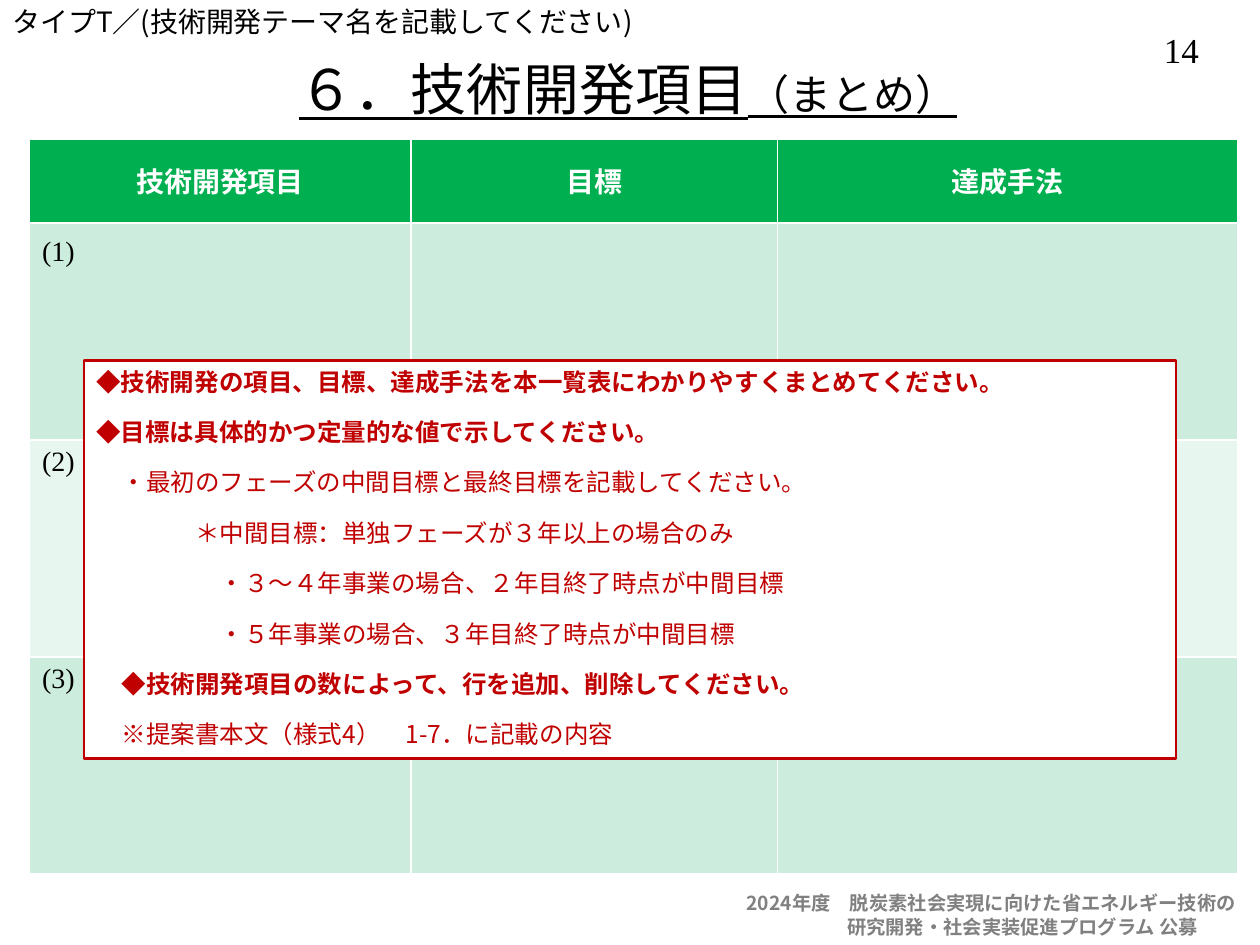
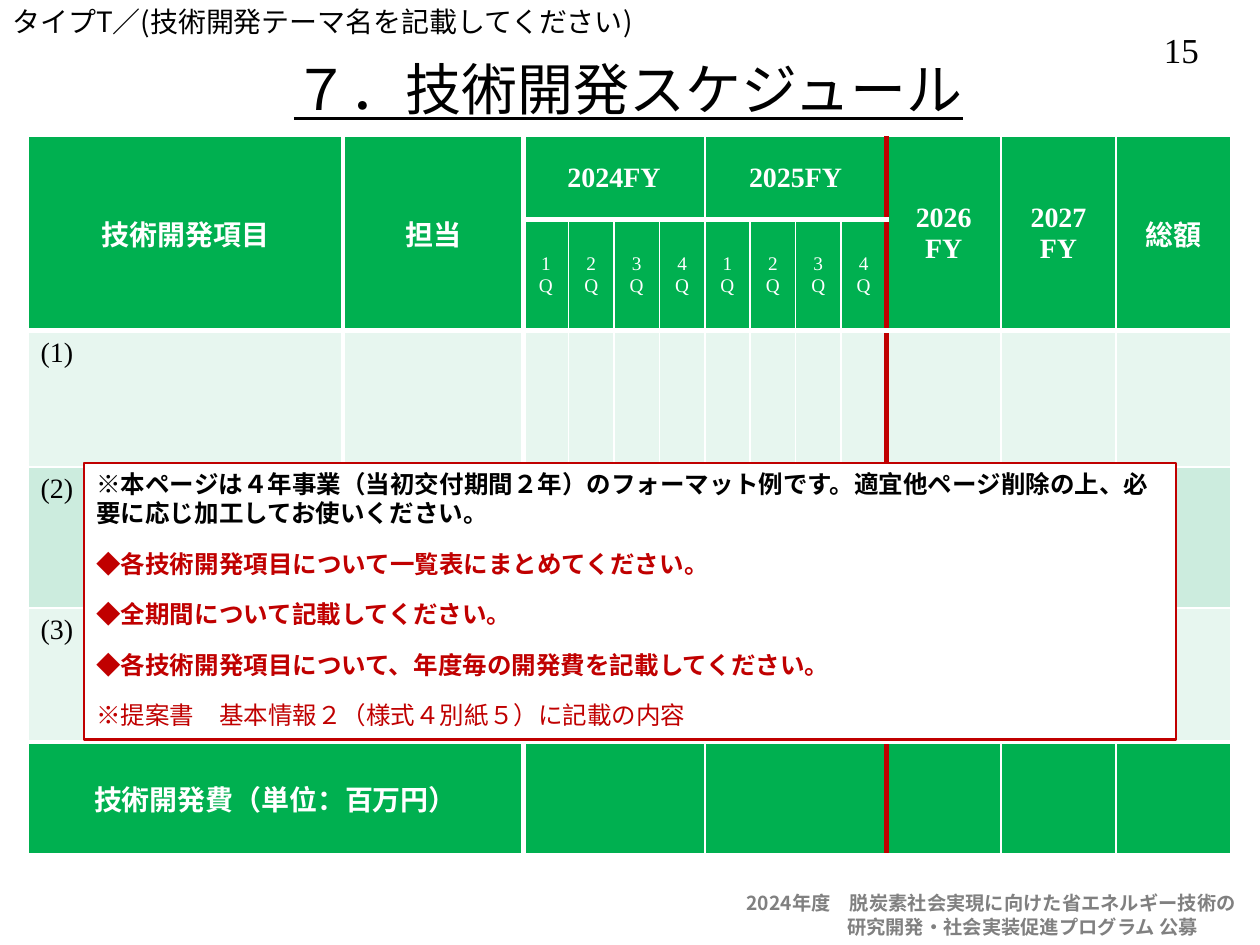
"""Build the development item summary and schedule slides."""
from lxml.etree import SubElement
from pptx import Presentation
from pptx.dml.color import RGBColor
from pptx.enum.shapes import MSO_SHAPE
from pptx.enum.text import MSO_ANCHOR, MSO_AUTO_SIZE, PP_ALIGN
from pptx.oxml.ns import qn
from pptx.util import Pt

HUES = {"ink": "000000", "paper": "FFFFFF", "red": "C00000", "gray": "808080",
        "green": "00B050", "mint": "CCECDE", "pale": "E7F6EF"}
SANS, SERIF = "Noto Sans CJK JP", "Times New Roman"
THEME = "タイプT／(技術開発テーマ名を記載してください)"
FOOT = [("2024年度　脱炭素社会実現に向けた省エネルギー技術の", 0),
        ("研究開発・社会実装促進プログラム 公募", 57.5)]
LABELS = ["(1)", "(2)", "(3)"]

GOALS = {
    "page": "14",
    "title": [("６．技術開発項目", 32), ("（まとめ）", 24)],
    "at": (16.8, 78.5), "cols": [218, 209.5, 263], "rows": [49] + [124] * 3,
    "merge": [],
    "cells": {(0, 0): "技術開発項目", (0, 1): "目標", (0, 2): "達成手法"},
    "first": 1, "last": 4, "tints": ["mint", "pale"], "labels": ["(1)　"] + LABELS[1:],
    "tall": {}, "flat": {0: 3, 1: 1.5}, "split": None,
    "box": (48, 206, 624, 227.5),
    "notes": [
        ("◆技術開発の項目、目標、達成手法を本一覧表にわかりやすくまとめてください。", 0, True, "red"),
        ("◆目標は具体的かつ定量的な値で示してください。", 0, True, "red"),
        ("・最初のフェーズの中間目標と最終目標を記載してください。", 14.4, False, "red"),
        ("＊中間目標：単独フェーズが３年以上の場合のみ", 56.4, False, "red"),
        ("・３～４年事業の場合、２年目終了時点が中間目標", 70.4, False, "red"),
        ("・５年事業の場合、３年目終了時点が中間目標", 70.4, False, "red"),
        ("◆技術開発項目の数によって、行を追加、削除してください。", 14.4, True, "red"),
        ("※提案書本文（様式4）　1-7．に記載の内容", 14.4, False, "red")],
}
PLAN = {
    "page": "15",
    "title": [("７．技術開発スケジュール", 32)],
    "at": (16, 78), "cols": [180, 103] + [25.95] * 8 + [65.6] * 3,
    "rows": [47.5, 63.5, 78, 80.5, 76.5, 64],
    "merge": [(0, c, 1, c) for c in (0, 1, 10, 11, 12)]
             + [(r, c, r, c + 3) for r in (0, 5) for c in (2, 6)] + [(5, 0, 5, 1)],
    "cells": {(0, 0): "技術開発項目", (0, 1): "担当", (0, 2): "2024FY", (0, 6): "2025FY",
              (0, 10): "2026\nFY", (0, 11): "2027\nFY", (0, 12): "総額",
              (5, 0): "技術開発費（単位：百万円）"}
             | {(1, 2 + q): f"{q % 4 + 1}Q" for q in range(8)},
    "first": 2, "last": 5, "tints": ["pale", "mint"], "labels": LABELS,
    "tall": {1: 3, 2: 3, 10: 3}, "flat": {1: 3, 2: 3, 5: 3}, "split": 10,
    "box": (48, 264.5, 624, 158),
    "notes": [
        ("※本ページは４年事業（当初交付期間２年）のフォーマット例です。"
         "適宜他ページ削除の上、必要に応じ加工してお使いください。", 0, True, "ink"),
        ("◆各技術開発項目について一覧表にまとめてください。", 0, True, "red"),
        ("◆全期間について記載してください。", 0, True, "red"),
        ("◆各技術開発項目について、年度毎の開発費を記載してください。", 0, True, "red"),
        ("※提案書　基本情報２（様式４別紙５）に記載の内容", 0, False, "red")],
}


def color(name):
    return RGBColor.from_string(HUES[name])


def apply(item, form):
    for key, value in form.items():
        setattr(item, key, value)


def add_run(para, text, size, hue="ink", face=SANS, **form):
    run = para.add_run()
    run.text = text
    apply(run.font, {"size": Pt(size), "name": face, **form})
    run.font.color.rgb = color(hue)
    SubElement(run.font._element, qn("a:ea")).set("typeface", SANS)


def set_frame(shape, anchor=MSO_ANCHOR.TOP):
    frame = shape.text_frame
    apply(frame, {"word_wrap": True, "auto_size": MSO_AUTO_SIZE.NONE,
                  "vertical_anchor": anchor, "margin_left": Pt(7.2),
                  "margin_right": Pt(7.2), "margin_top": Pt(3.6), "margin_bottom": Pt(3.6)})
    return frame


def add_lines(shape, lines, size, gap=0, face=SANS):
    frame = set_frame(shape)
    for at, (text, indent, bold, hue) in enumerate(lines):
        para = frame.add_paragraph() if at else frame.paragraphs[0]
        apply(para, {"alignment": PP_ALIGN.LEFT, "line_spacing": Pt(size * 1.2),
                     "space_before": Pt(gap if at else 0)})
        props = para._p.get_or_add_pPr()
        props.set("marL", str(Pt(indent)))
        props.set("indent", "0")
        add_run(para, text, size, hue, face, bold=bold)


def add_label(slide, place, lines, size, face=SANS):
    add_lines(slide.shapes.add_textbox(*map(Pt, place)), lines, size, face=face)


def add_frame(slide, data):
    add_label(slide, (658, 13, 47, 31), [(data["page"], 0, False, "ink")], 20, SERIF)
    add_label(slide, (0, -0.7, 605, 26.6), [(THEME, 0, False, "ink")], 16)
    add_label(slide, (419.5, 506, 305, 34), [(*line, True, "gray") for line in FOOT], 11)
    title = slide.shapes.title
    apply(title, dict(zip(("left", "top", "width", "height"), map(Pt, (53, 25, 612, 50.4)))))
    para = set_frame(title, MSO_ANCHOR.MIDDLE).paragraphs[0]
    apply(para, {"alignment": PP_ALIGN.CENTER, "line_spacing": Pt(38.4)})
    for text, size in data["title"]:
        add_run(para, text, size, underline=True)


def add_edge(cell, side, width, hue):
    line = SubElement(cell._tc.get_or_add_tcPr(), qn(f"a:ln{side}"), w=str(Pt(width)))
    SubElement(SubElement(line, qn("a:solidFill")), qn("a:srgbClr"), val=HUES[hue])


def add_grid(slide, data):
    cols, rows = data["cols"], data["rows"]
    place = (*data["at"], sum(cols), sum(rows))
    table = slide.shapes.add_table(len(rows), len(cols), *map(Pt, place)).table
    apply(table, {"first_row": False, "horz_banding": False})
    for col, width in zip(table.columns, cols):
        col.width = Pt(width)
    for row, height in zip(table.rows, rows):
        row.height = Pt(height)
    for top, left, low, right in data["merge"]:
        table.cell(top, left).merge(table.cell(low, right))
    for r in range(len(rows)):
        for c in range(len(cols)):
            cell = table.cell(r, c)
            if not cell.is_spanned:
                fill_cell(cell, r, c, data)


def fill_cell(cell, r, c, data):
    wide, high = (cell.span_width, cell.span_height) if cell.is_merge_origin else (1, 1)
    tall, flat, split = data["tall"], data["flat"], data["split"]
    for side, edge in (("L", c), ("R", c + wide)):
        add_edge(cell, side, tall.get(edge, 1), "red" if edge == split else "paper")
    for side, edge in (("T", r), ("B", r + high)):
        add_edge(cell, side, flat.get(edge, 1), "paper")
    step = r - data["first"]
    body = data["first"] <= r < data["last"]
    cell.fill.solid()
    cell.fill.fore_color.rgb = color(data["tints"][step % 2] if body else "green")
    cell.vertical_anchor = MSO_ANCHOR.TOP if body else MSO_ANCHOR.MIDDLE
    text = data["labels"][step] if body and c == 0 else data["cells"].get((r, c))
    if not text:
        return
    small = text.endswith("Q")
    for at, part in enumerate(text.split("\n")):
        frame = cell.text_frame
        para = frame.add_paragraph() if at else frame.paragraphs[0]
        para.alignment = PP_ALIGN.LEFT if body else PP_ALIGN.CENTER
        add_run(para, part, 11 if small else 16, "ink" if body else "paper",
                SERIF, bold=not (body or small))


def add_notes(slide, data):
    box = slide.shapes.add_shape(MSO_SHAPE.RECTANGLE, *map(Pt, data["box"]))
    box.shadow.inherit = False
    box.fill.solid()
    box.fill.fore_color.rgb = color("paper")
    box.line.color.rgb = color("red")
    box.line.width = Pt(1.5)
    add_lines(box, data["notes"], 14, 12)


def main():
    deck = Presentation()
    apply(deck, {"slide_width": Pt(720), "slide_height": Pt(540)})
    for data in (GOALS, PLAN):
        slide = deck.slides.add_slide(deck.slide_layouts[5])
        for build in (add_frame, add_grid, add_notes):
            build(slide, data)
    deck.save("out.pptx")


if __name__ == "__main__":
    main()
